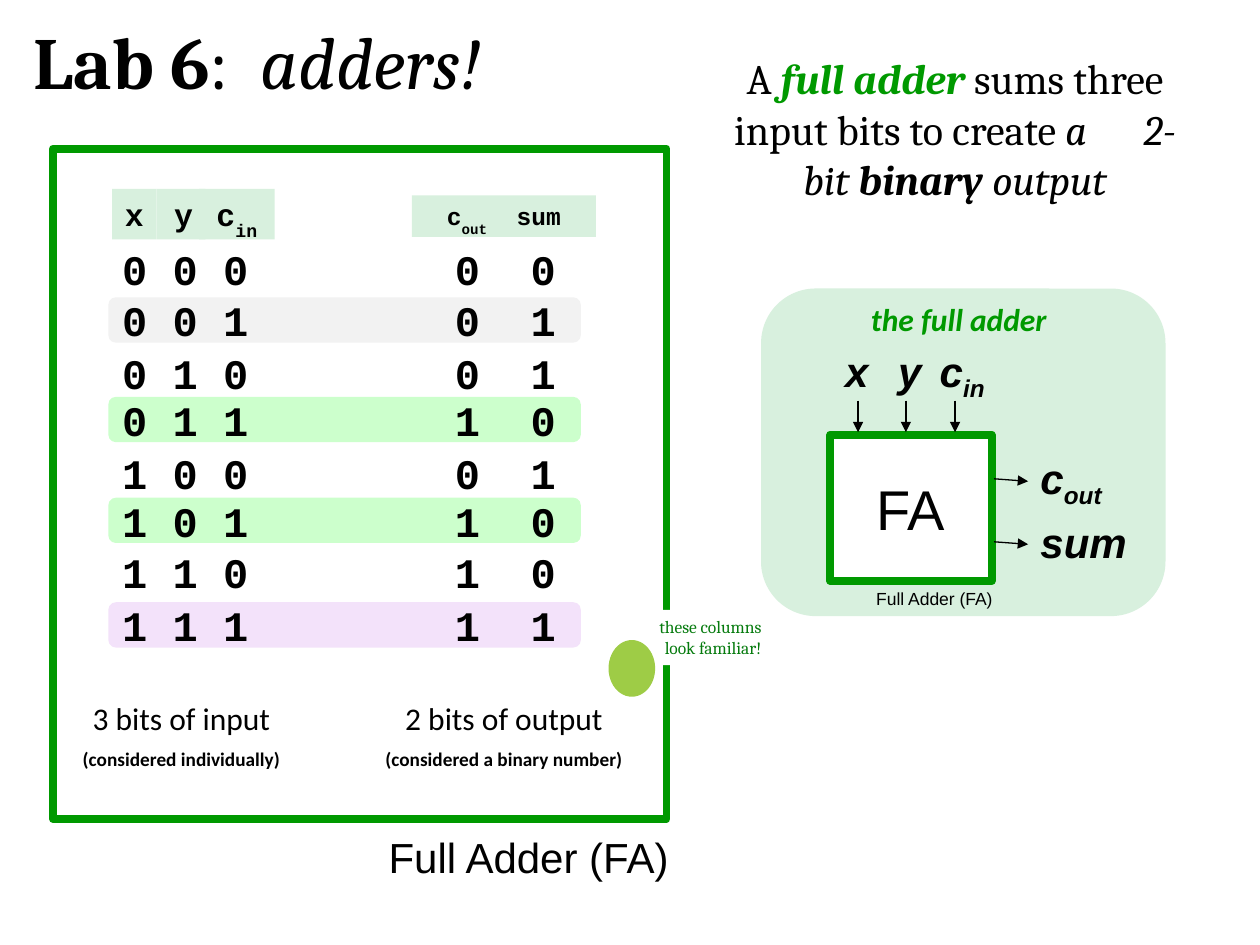
from dataclasses import dataclass

from lxml import etree
from pptx import Presentation
from pptx import util as u
from pptx.dml.color import RGBColor
from pptx.enum import shapes, text
from pptx.oxml.ns import qn


@dataclass(frozen=True)
class Theme:
    # Colours
    ink: str = "000000"
    white: str = "FFFFFF"
    green: str = "009900"
    note: str = "067B0E"
    mint: str = "D8F0DE"
    gray: str = "F2F2F2"
    lime: str = "CCFFCC"
    lilac: str = "F3E2FA"
    alien: str = "9ECC46"
    # Fonts
    serif: str = "Cambria"
    sans: str = "Calibri"
    plain: str = "Arial"
    mono: str = "Courier New"
    # Type sizes
    title: int = 42
    block: int = 32
    big: int = 24
    mid: int = 18
    head: int = 14
    small: int = 11
    tiny: int = 10
    # Line widths
    frame: float = 4.5
    thin: float = 0.75


T = Theme()
KIND = shapes.MSO_SHAPE
ALIGN = text.PP_ALIGN
LEFT, MID, RIGHT = ALIGN.LEFT, ALIGN.CENTER, ALIGN.RIGHT


def rgb(code):
    return RGBColor.from_string(code)


def place(box, x, y, w, h):
    """Turn a spot within box into slide lengths."""
    return [u.Inches(n) for n in (box[0] + x, box[1] + y, w, h)]


def shape(slide, area, fill, line=None, kind=KIND.RECTANGLE):
    item = slide.shapes.add_shape(kind, *area)
    item.shadow.inherit = False
    item.fill.solid()
    item.fill.fore_color.rgb = rgb(fill)
    if line:
        item.line.color.rgb = rgb(line)
        item.line.width = u.Pt(T.frame)
    else:
        item.line.fill.background()
    return item


def write(item, runs, font, size, align=MID, color=T.ink, wrap=True, grow=True):
    """Fill item with runs of (words, formats); formats may override the colour."""
    frame = item.text_frame
    frame.word_wrap = wrap
    if grow:
        frame.auto_size = text.MSO_AUTO_SIZE.SHAPE_TO_FIT_TEXT
        frame.vertical_anchor = text.MSO_ANCHOR.TOP
    para = frame.paragraphs[0]
    para.alignment = align
    for words, form in runs:
        run = para.add_run()
        run.text = words
        run.font.name = font
        run.font.size = u.Pt(size)
        run.font.bold = form.get("b", False)
        run.font.italic = form.get("i", False)
        run.font.color.rgb = rgb(form.get("color", color))
        for key in ("baseline", "spc"):
            if key in form:
                run.font._element.set(key, str(form[key]))


def label(slide, area, runs, font, size, **look):
    write(slide.shapes.add_textbox(*area), runs, font, size, **look)


def arrow(slide, box, x, y, dx, dy):
    x, y, dx, dy = place(box, x, y, dx, dy)
    line = slide.shapes.add_connector(
        shapes.MSO_CONNECTOR.STRAIGHT, x, y, x + dx, y + dy)
    line.line.color.rgb = rgb(T.ink)
    line.line.width = u.Pt(T.thin)
    etree.SubElement(line.line._get_or_add_ln(), qn("a:tailEnd"), type="triangle")
    etree.SubElement(line._element.spPr, qn("a:effectLst"))


BOLD = {"b": True}
ITAL = {"i": True}
BOTH = {"b": True, "i": True}


def sub(form, drop):
    return {**form, "baseline": -1000 * drop}


def titles(slide, box):
    label(slide, place(box, 0.17, 0.08, 5.25, 0.81),
          [("Lab 6", BOLD), (":  ", {}), ("adders!", ITAL)],
          T.serif, T.title, align=LEFT)
    label(slide, place(box, 5.66, 0.37, 3.84, 1.31),
          [("A ", {}), ("full adder ", {**BOTH, "color": T.green}),
           ("sums three input bits to create ", {}), ("a", ITAL),
           (" ", {**ITAL, "spc": 2700}), ("2-bit", ITAL),
           (" binary ", BOTH), ("output", ITAL)],
          T.serif, T.big)


# Row top, inputs, outputs, band colour
ROWS = [
    (0.70, "0 0 0", "0  0", None),
    (1.11, "0 0 1", "0  1", T.gray),
    (1.53, "0 1 0", "0  1", None),
    (1.90, "0 1 1", "1  0", T.lime),
    (2.32, "1 0 0", "0  1", None),
    (2.70, "1 0 1", "1  0", T.lime),
    (3.11, "1 1 0", "1  0", None),
    (3.53, "1 1 1", "1  1", T.lilac),
]


def truth(slide, box):
    shape(slide, place(box, 0, 0, *box[2:]), T.white, T.green)

    # Column heads
    heads = [
        (2.85, 0.37, 1.46, 0.33, T.head, MID,
         [("c", BOLD), ("out", sub(BOLD, 35)), ("  sum", BOLD)]),
        (1.16, 0.32, 0.60, 0.40, T.mid, MID, [("c", BOLD), ("in", sub(BOLD, 35))]),
        (0.47, 0.32, 0.35, 0.40, T.mid, MID, [("x", BOLD)]),
        (0.82, 0.32, 0.39, 0.40, T.mid, RIGHT, [("y", BOLD)]),
    ]
    for x, y, w, h, size, align, runs in heads:
        cell = shape(slide, place(box, x, y, w, h), T.mint)
        write(cell, runs, T.mono, size, align=align, wrap=runs[0][0] != "x")

    # Rows of bits
    for y, ins, outs, band in ROWS:
        if band:
            shape(slide, place(box, 0.44, y + 0.07, 3.75, 0.36), band,
                  kind=KIND.ROUNDED_RECTANGLE)
        for x, bits in ((0.34, ins), (2.88, outs)):
            label(slide, place(box, x, y, 1.42, 0.5), [(bits, BOLD)], T.mono, T.big)

    # Captions
    for x, w, main, more in (
            (0.13, 1.78, "3 bits of input", "(considered individually)"),
            (2.55, 2.06, "2 bits of output", "(considered a binary number)")):
        label(slide, place(box, x, 4.32, w, 0.4), [(main, {})], T.sans, T.mid)
        label(slide, place(box, x - 0.05, 4.7, w + 0.1, 0.29), [(more, BOLD)],
              T.sans, T.small)
    label(slide, place(box, 2.55, 5.37, 2.45, 0.5), [("Full Adder (FA)", {})],
          T.plain, T.big, wrap=False)

    # Remark and its speaker
    remark = shape(slide, place(box, 4.6, 3.66, 1.12, 0.44), T.white)
    write(remark, [("these columns look familiar!", {})], T.serif, T.tiny,
          align=RIGHT, color=T.note)
    shape(slide, place(box, 4.41, 3.9, 0.37, 0.45), T.alien, kind=KIND.OVAL)


def adder(slide, box):
    shape(slide, place(box, 0, 0, *box[2:]), T.mint, kind=KIND.ROUNDED_RECTANGLE)
    label(slide, place(box, 0.03, 0.04, 3.08, 0.4), [("the full adder", BOTH)],
          T.sans, T.mid, color=T.green)
    block = shape(slide, place(box, 0.55, 1.16, 1.28, 1.16), T.white, T.green)
    write(block, [("FA", {})], T.plain, T.block, wrap=False, grow=False)
    label(slide, place(box, 0.8, 2.33, 1.15, 0.27), [("Full Adder (FA)", {})],
          T.plain, T.tiny, wrap=False)

    # Inputs and outputs
    for x in (0.77, 1.15, 1.54):
        arrow(slide, box, x, 0.89, 0, 0.25)
    for y in (1.51, 2.01):
        arrow(slide, box, 1.85, y, 0.27, 0.02)
    for x, y, w, name, low in (
            (0.57, 0.4, 0.37, "x", ""), (0.99, 0.4, 0.39, "y", ""),
            (1.32, 0.4, 1.22, "c", "in"), (2.12, 1.25, 0.76, "c", "out"),
            (2.12, 1.76, 0.9, "sum", "")):
        runs = [(name, BOTH)] + ([(low, sub(BOTH, 25))] if low else [])
        label(slide, place(box, x, y, w, 0.5), runs, T.plain, T.big, align=LEFT)


def main():
    deck = Presentation()
    deck.slide_width, deck.slide_height = u.Inches(10), u.Inches(7.5)
    slide = deck.slides.add_slide(deck.slide_layouts[6])
    titles(slide, (0, 0, 10, 1.7))
    truth(slide, (0.42, 1.18, 4.87, 5.32))
    adder(slide, (6.04, 2.29, 3.21, 2.6))
    deck.save("out.pptx")


if __name__ == "__main__":
    main()
